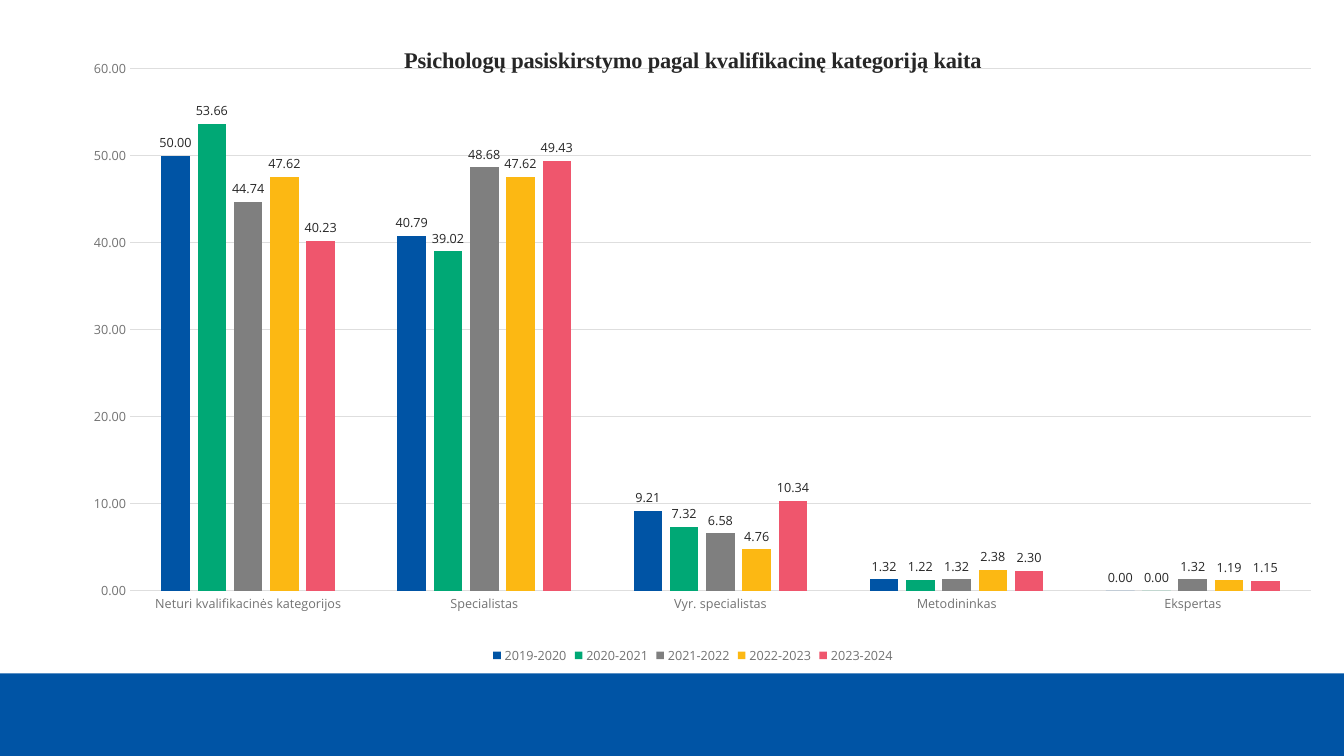
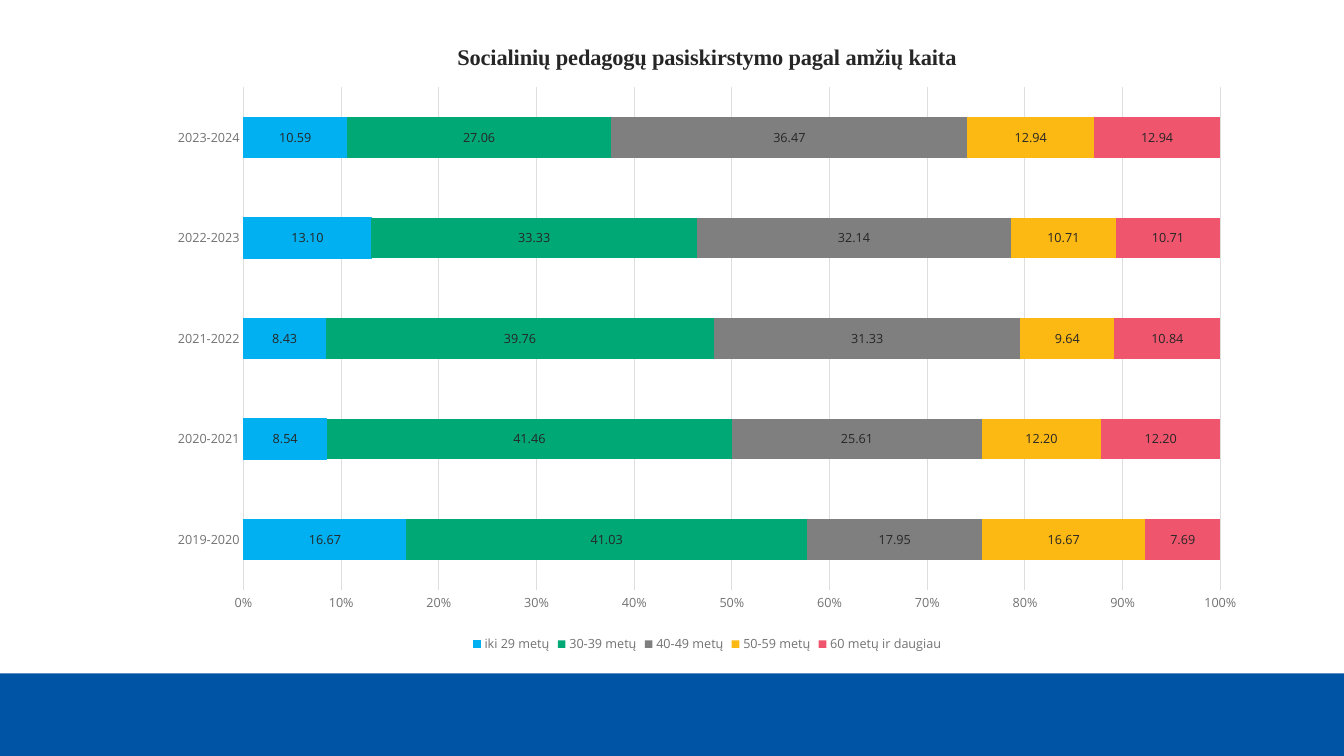
from dataclasses import dataclass

from lxml.etree import SubElement
from pptx import Presentation
from pptx.chart.data import CategoryChartData
from pptx.dml.color import RGBColor
from pptx.enum.chart import XL_CHART_TYPE, XL_LABEL_POSITION, XL_LEGEND_POSITION, XL_TICK_MARK
from pptx.enum.shapes import MSO_SHAPE
from pptx.oxml import parse_xml
from pptx.oxml.ns import nsdecls, qn
from pptx.util import Pt


@dataclass(frozen=True)
class Theme:
    blue: str = "0054A5"
    sky: str = "00B0F0"
    green: str = "00A875"
    gray: str = "7F7F7F"
    yellow: str = "FCB813"
    pink: str = "EF566D"
    ink: str = "262626"
    muted: str = "727272"
    rule: str = "DEDEDE"
    body_face: str = "Open Sans"
    title_face: str = "Times New Roman"
    title_size: float = 16
    body_size: float = 10
    label_size: float = 9
    line_width: float = 0.75


THEME = Theme()
SLIDE_WIDTH, SLIDE_HEIGHT = 960, 540
BAND_TOP = 481

# Content: each series is (name, values, fill colour)
PSYCHOLOGISTS = dict(
    title="Psichologų pasiskirstymo pagal kvalifikacinę kategoriją kaita",
    kind=XL_CHART_TYPE.COLUMN_CLUSTERED,
    box=(48.24, 16.56, 893.52, 460.8),
    plot_area=(0.05, 0.071, 0.944, 0.809),
    gap=219, overlap=-27,
    axis_format="0.00", axis_range=(0, 60, 10),
    label_position=XL_LABEL_POSITION.OUTSIDE_END,
    categories=["Neturi kvalifikacinės kategorijos", "Specialistas",
                "Vyr. specialistas", "Metodininkas", "Ekspertas"],
    series=[
        ("2019-2020", (50, 40.79, 9.21, 1.32, 0), THEME.blue),
        ("2020-2021", (53.66, 39.02, 7.32, 1.22, 0), THEME.green),
        ("2021-2022", (44.74, 48.68, 6.58, 1.32, 1.32), THEME.gray),
        ("2022-2023", (47.62, 47.62, 4.76, 2.38, 1.19), THEME.yellow),
        ("2023-2024", (40.23, 49.43, 10.34, 2.3, 1.15), THEME.pink),
    ],
    outlined=(),
)
SOCIAL_PEDAGOGUES = dict(
    title="Socialinių pedagogų pasiskirstymo pagal amžių kaita",
    kind=XL_CHART_TYPE.BAR_STACKED_100,
    box=(110.88, 15.12, 788.4, 454.32),
    plot_area=(0.08, 0.104, 0.885, 0.79),
    gap=150, overlap=100,
    axis_format="0%", axis_range=None,
    label_position=XL_LABEL_POSITION.CENTER,
    categories=["2019-2020", "2020-2021", "2021-2022", "2022-2023", "2023-2024"],
    series=[
        ("iki 29 metų", (16.67, 8.54, 8.43, 13.1, 10.59), THEME.sky),
        ("30-39 metų", (41.03, 41.46, 39.76, 33.33, 27.06), THEME.green),
        ("40-49 metų", (17.95, 25.61, 31.33, 32.14, 36.47), THEME.gray),
        ("50-59 metų", (16.67, 12.2, 9.64, 10.71, 12.94), THEME.yellow),
        ("60 metų ir daugiau", (7.69, 12.2, 10.84, 10.71, 12.94), THEME.pink),
    ],
    outlined=("iki 29 metų",),
)


# Formatting helpers
def style_font(font, size=THEME.label_size, color=THEME.muted, face=THEME.body_face, bold=False):
    font.size, font.name, font.bold = Pt(size), face, bold
    font.color.rgb = RGBColor.from_string(color)


def write(frame, text, **font_format):
    run = frame.paragraphs[0].add_run()
    run.text = text
    style_font(run.font, **font_format)


def paint_line(line, color):
    line.color.rgb = RGBColor.from_string(color)
    line.width = Pt(THEME.line_width)


def paint_fill(fill, color):
    fill.solid()
    fill.fore_color.rgb = RGBColor.from_string(color)


def place_plot_area(chart, fractions):
    plot_area = chart.element.find(".//" + qn("c:plotArea"))
    for automatic in plot_area.findall(qn("c:layout")):
        plot_area.remove(automatic)
    layout = parse_xml(f"<c:layout {nsdecls('c')}/>")
    manual = SubElement(layout, qn("c:manualLayout"))
    settings = [("layoutTarget", "inner"), ("xMode", "edge"), ("yMode", "edge")]
    settings += zip("xywh", fractions)
    for tag, value in settings:
        SubElement(manual, qn(f"c:{tag}")).set("val", str(value))
    plot_area.insert(0, layout)


# Shared bottom band, kept on the layout
def move_band_to_layout(slide, layout):
    band = slide.shapes.add_shape(MSO_SHAPE.RECTANGLE, 0, Pt(BAND_TOP),
                                  Pt(SLIDE_WIDTH), Pt(SLIDE_HEIGHT - BAND_TOP))
    band.shadow.inherit = False
    paint_fill(band.fill, THEME.blue)
    band.line.fill.background()
    layout.shapes.element.append(band.element)


# Chart parts
def style_axes(chart, number_format, axis_range):
    categories, values = chart.category_axis, chart.value_axis
    for axis in (categories, values):
        axis.major_tick_mark = axis.minor_tick_mark = XL_TICK_MARK.NONE
        style_font(axis.tick_labels.font)
    categories.has_major_gridlines = False
    paint_line(categories.format.line, THEME.rule)
    values.has_major_gridlines = True
    paint_line(values.major_gridlines.format.line, THEME.rule)
    values.format.line.fill.background()
    values.tick_labels.number_format = number_format
    values.tick_labels.number_format_is_linked = False
    if axis_range:
        values.minimum_scale, values.maximum_scale, values.major_unit = axis_range


def style_series(series, color, label_position, outlined):
    paint_fill(series.format.fill, color)
    series.invert_if_negative = False
    if outlined:
        paint_line(series.format.line, color)
    else:
        series.format.line.fill.background()
    labels = series.data_labels
    labels.show_value = True
    labels.number_format, labels.number_format_is_linked = "0.00", False
    labels.position = label_position
    style_font(labels.font, color=THEME.ink)


def add_distribution_chart(slide, content):
    table = CategoryChartData(number_format="0.00")
    table.categories = content["categories"]
    for name, values, _ in content["series"]:
        table.add_series(name, values)
    box = [Pt(length) for length in content["box"]]
    chart = slide.shapes.add_chart(content["kind"], *box, table).chart
    style_font(chart.font, size=THEME.body_size, color=THEME.ink)

    chart.has_title = True
    write(chart.chart_title.text_frame, content["title"], size=THEME.title_size,
          color=THEME.ink, face=THEME.title_face, bold=True)
    chart.has_legend = True
    chart.legend.position = XL_LEGEND_POSITION.BOTTOM
    chart.legend.include_in_layout = False
    style_font(chart.legend.font)

    plot = chart.plots[0]
    plot.vary_by_categories = False
    plot.gap_width, plot.overlap = content["gap"], content["overlap"]
    for series, (name, _, color) in zip(plot.series, content["series"]):
        style_series(series, color, content["label_position"], name in content["outlined"])
    style_axes(chart, content["axis_format"], content["axis_range"])
    place_plot_area(chart, content["plot_area"])


def main():
    deck = Presentation()
    deck.slide_width, deck.slide_height = Pt(SLIDE_WIDTH), Pt(SLIDE_HEIGHT)
    blank = deck.slide_layouts[6]
    for number, content in enumerate((PSYCHOLOGISTS, SOCIAL_PEDAGOGUES)):
        slide = deck.slides.add_slide(blank)
        if number == 0:
            move_band_to_layout(slide, blank)
        add_distribution_chart(slide, content)
    deck.save("out.pptx")


if __name__ == "__main__":
    main()
